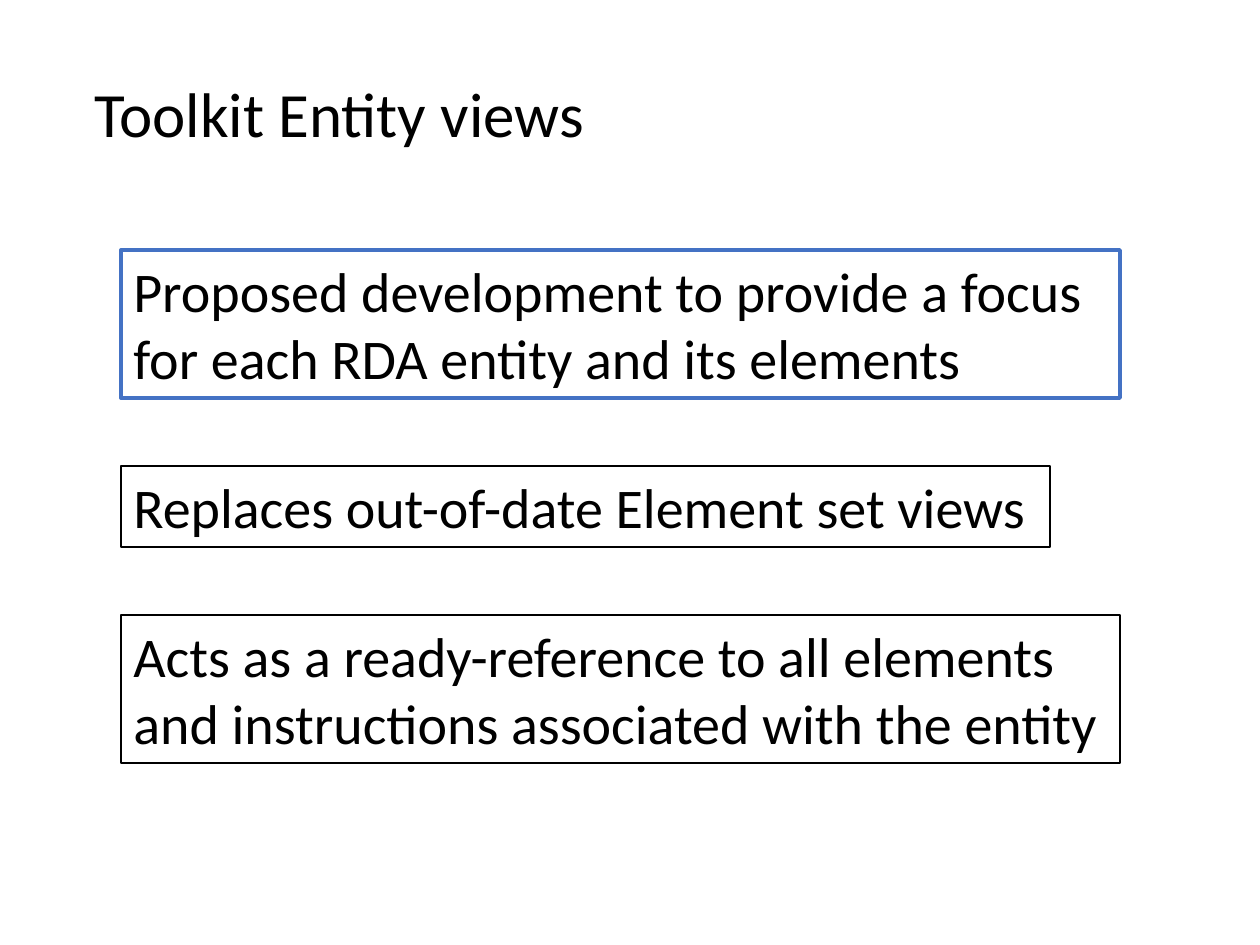
import pptx
import pptx.util
import pptx.dml.color
import pptx.enum.text

PX = 914400 // 126
FONT = "Calibri"
BLACK, BLUE = "000000", "4472C4"

TITLE = "Toolkit Entity views"
# text, width, height, line colour, line points, wrap
BOXES = [
    ("Proposed development to provide a focus for each RDA entity and its elements",
     999, 148, BLUE, 2.25, True),
    ("Replaces out-of-date Element set views", 929, 81, BLACK, 1.5, False),
    ("Acts as a ready-reference to all elements and instructions associated with the entity",
     999, 148, BLACK, 1.5, True),
]
LEFT, TOP, GAP = 121, 250, 68


def color(code):
    return pptx.dml.color.RGBColor.from_string(code)


def add_text(slide, text, left, top, width, height, size, wrap):
    box = slide.shapes.add_textbox(*(n * PX for n in (left, top, width, height)))
    frame = box.text_frame
    frame.word_wrap = wrap
    frame.auto_size = pptx.enum.text.MSO_AUTO_SIZE.SHAPE_TO_FIT_TEXT
    run = frame.paragraphs[0].add_run()
    run.text = text
    run.font.name = FONT
    run.font.size = pptx.util.Pt(size)
    run.font.color.rgb = color(BLACK)
    return box


def main():
    deck = pptx.Presentation()
    deck.slide_width = pptx.util.Inches(10)
    deck.slide_height = pptx.util.Inches(7.5)
    slide = deck.slides.add_slide(deck.slide_layouts[6])

    add_text(slide, TITLE, 82, 68, 539, 89, 36, False)
    top = TOP
    for text, width, height, line, weight, wrap in BOXES:
        box = add_text(slide, text, LEFT, top, width, height, 32, wrap)
        box.line.color.rgb = color(line)
        box.line.width = pptx.util.Pt(weight)
        top += height + GAP

    deck.save("out.pptx")


if __name__ == "__main__":
    main()
